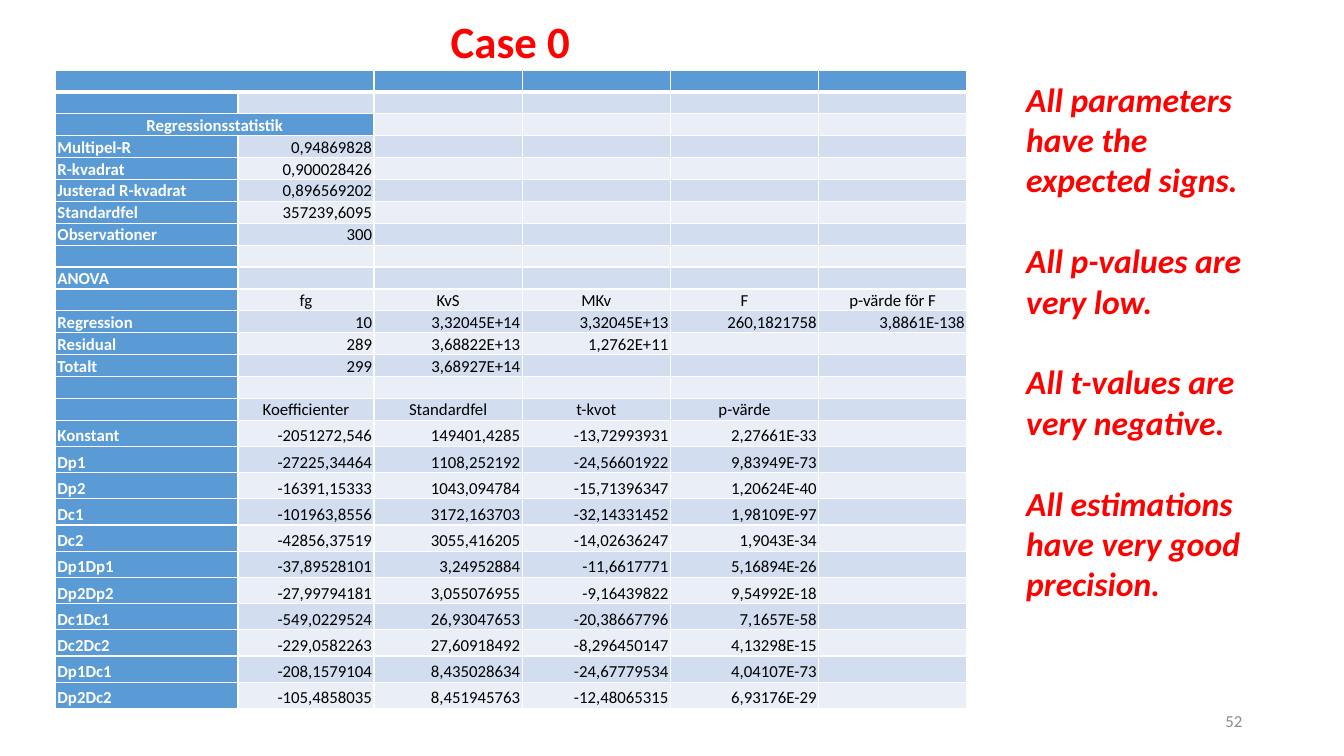
from dataclasses import dataclass

import pptx
import pptx.dml.color
import pptx.enum.text
import pptx.oxml
import pptx.oxml.ns
import pptx.util
from pptx.util import Inches

ALIGN = pptx.enum.text.PP_ALIGN
ANCHOR = pptx.enum.text.MSO_ANCHOR


@dataclass(frozen=True)
class Theme:
    font: str = "Calibri"
    accent: str = "5B9BD5"
    bands: tuple = ("EAEFF7", "D2DEEF")
    white: str = "FFFFFF"
    black: str = "000000"
    red: str = "FF0000"
    grey: str = "8C8C8C"
    title: int = 32
    notes: int = 24
    small: int = 12
    empty: int = 11


THEME = Theme()

COL_WIDTHS = [1.81, 1.35] + [1.47] * 4
TABLE_HEIGHT = 6.29
COEF_ROW = 0.26
HEADER_ROWS = (10, 15)
MERGED_ROWS = (0, 2)

SUMMARY = [
    [],
    [],
    ["Regressionsstatistik"],
    ["Multipel-R", "0,94869828"],
    ["R-kvadrat", "0,900028426"],
    ["Justerad R-kvadrat", "0,896569202"],
    ["Standardfel", "357239,6095"],
    ["Observationer", "300"],
    [],
    ["ANOVA"],
    ["", "fg", "KvS", "MKv", "F", "p-värde för F"],
    ["Regression", "10", "3,32045E+14", "3,32045E+13", "260,1821758", "3,8861E-138"],
    ["Residual", "289", "3,68822E+13", "1,2762E+11"],
    ["Totalt", "299", "3,68927E+14"],
    [],
    ["", "Koefficienter", "Standardfel", "t-kvot", "p-värde"],
]
COEFFICIENTS = [
    ["Konstant", "-2051272,546", "149401,4285", "-13,72993931", "2,27661E-33"],
    ["Dp1", "-27225,34464", "1108,252192", "-24,56601922", "9,83949E-73"],
    ["Dp2", "-16391,15333", "1043,094784", "-15,71396347", "1,20624E-40"],
    ["Dc1", "-101963,8556", "3172,163703", "-32,14331452", "1,98109E-97"],
    ["Dc2", "-42856,37519", "3055,416205", "-14,02636247", "1,9043E-34"],
    ["Dp1Dp1", "-37,89528101", "3,24952884", "-11,6617771", "5,16894E-26"],
    ["Dp2Dp2", "-27,99794181", "3,055076955", "-9,16439822", "9,54992E-18"],
    ["Dc1Dc1", "-549,0229524", "26,93047653", "-20,38667796", "7,1657E-58"],
    ["Dc2Dc2", "-229,0582263", "27,60918492", "-8,296450147", "4,13298E-15"],
    ["Dp1Dc1", "-208,1579104", "8,435028634", "-24,67779534", "4,04107E-73"],
    ["Dp2Dc2", "-105,4858035", "8,451945763", "-12,48065315", "6,93176E-29"],
]
NOTES = [
    "All parameters have the expected signs.",
    "All p-values are very low.",
    "All t-values are very negative.",
    "All estimations have very good precision.",
]


def rgb(color):
    return pptx.dml.color.RGBColor.from_string(color)


def write(p, text, size, color, bold=False, italic=False,
          align=ALIGN.LEFT, spacing=None, before=0):
    p.alignment = align
    p.space_before = pptx.util.Pt(before)
    if spacing:
        p.line_spacing = spacing
    r = p.add_run()
    r.text = text
    r.font.name = THEME.font
    r.font.size = pptx.util.Pt(size)
    r.font.color.rgb = rgb(color)
    r.font.bold = bold
    r.font.italic = italic


def add_textbox(slide, left, top, width, height, anchor=ANCHOR.TOP):
    sp = slide.shapes.add_textbox(Inches(left), Inches(top), Inches(width), Inches(height))
    tf = sp.text_frame
    tf.word_wrap = True
    tf.vertical_anchor = anchor
    return tf


def set_borders(cell, top, bottom):
    tc_pr = cell._tc.get_or_add_tcPr()
    sides = (("lnL", 1), ("lnR", 1), ("lnT", top), ("lnB", bottom))
    for i, (side, points) in enumerate(sides):
        tc_pr.insert(i, pptx.oxml.parse_xml(
            f'<a:{side} {pptx.oxml.ns.nsdecls("a")} w="{pptx.util.Pt(points)}">'
            f'<a:solidFill><a:srgbClr val="{THEME.white}"/></a:solidFill></a:{side}>'))


def format_cell(cell, text, row, col):
    label = col == 0
    cell.margin_left = cell.margin_right = Inches(0.02)
    cell.margin_top = cell.margin_bottom = 0
    cell.vertical_anchor = ANCHOR.BOTTOM
    cell.fill.solid()
    blue = label or row == 0 or (row in MERGED_ROWS and col == 1)
    cell.fill.fore_color.rgb = rgb(THEME.accent if blue else THEME.bands[row % 2])
    set_borders(cell, top=3 if row == 1 else 1, bottom=3 if row == 0 else 1)
    p = cell.text_frame.paragraphs[0]
    if not text:
        # Keep empty cells from stretching the row
        p._p.append(pptx.oxml.parse_xml(
            f'<a:endParaRPr {pptx.oxml.ns.nsdecls("a")} sz="{THEME.empty * 100}"/>'))
        return
    if row in HEADER_ROWS + MERGED_ROWS:
        align = ALIGN.CENTER
    else:
        align = ALIGN.LEFT if label else ALIGN.RIGHT
    write(p, text, THEME.small, THEME.white if label else THEME.black,
          bold=label, align=align, spacing=1.07)


def add_regression_table(slide, left, top):
    rows = SUMMARY + COEFFICIENTS
    table = slide.shapes.add_table(
        len(rows), len(COL_WIDTHS), Inches(left), Inches(top),
        Inches(sum(COL_WIDTHS)), Inches(TABLE_HEIGHT)).table
    for column, width in zip(table.columns, COL_WIDTHS):
        column.width = Inches(width)
    summary_row = (TABLE_HEIGHT - COEF_ROW * len(COEFFICIENTS)) / len(SUMMARY)
    for i, values in enumerate(rows):
        table.rows[i].height = Inches(summary_row if i < len(SUMMARY) else COEF_ROW)
        for j in range(len(COL_WIDTHS)):
            format_cell(table.cell(i, j), values[j] if j < len(values) else "", i, j)
    for i in MERGED_ROWS:
        table.cell(i, 0).merge(table.cell(i, 1))


def add_title(slide, text):
    sp = slide.shapes.title
    sp.left, sp.top, sp.width, sp.height = map(Inches, (4.37, 0.09, 2.38, 0.64))
    tf = sp.text_frame
    tf.auto_size = pptx.enum.text.MSO_AUTO_SIZE.NONE
    tf.vertical_anchor = ANCHOR.TOP
    write(tf.paragraphs[0], text, THEME.title, THEME.red, bold=True)


def add_notes_column(slide):
    tf = add_textbox(slide, 10.08, 0.73, 2.61, 5.65)
    for i, text in enumerate(NOTES):
        p = tf.add_paragraph() if i else tf.paragraphs[0]
        write(p, text, THEME.notes, THEME.red, bold=True, italic=True,
              before=29 if i else 0)


def main():
    prs = pptx.Presentation()
    prs.slide_width, prs.slide_height = Inches(13.33), Inches(7.5)
    slide = prs.slides.add_slide(prs.slide_layouts[5])

    # Heading and regression output
    add_title(slide, "Case 0")
    add_regression_table(slide, 0.55, 0.7)

    # Conclusions and page number
    add_notes_column(slide)
    number = add_textbox(slide, 9.42, 6.95, 3, 0.4, anchor=ANCHOR.MIDDLE)
    write(number.paragraphs[0], "52", THEME.small, THEME.grey, align=ALIGN.RIGHT)

    prs.save("out.pptx")


if __name__ == "__main__":
    main()
